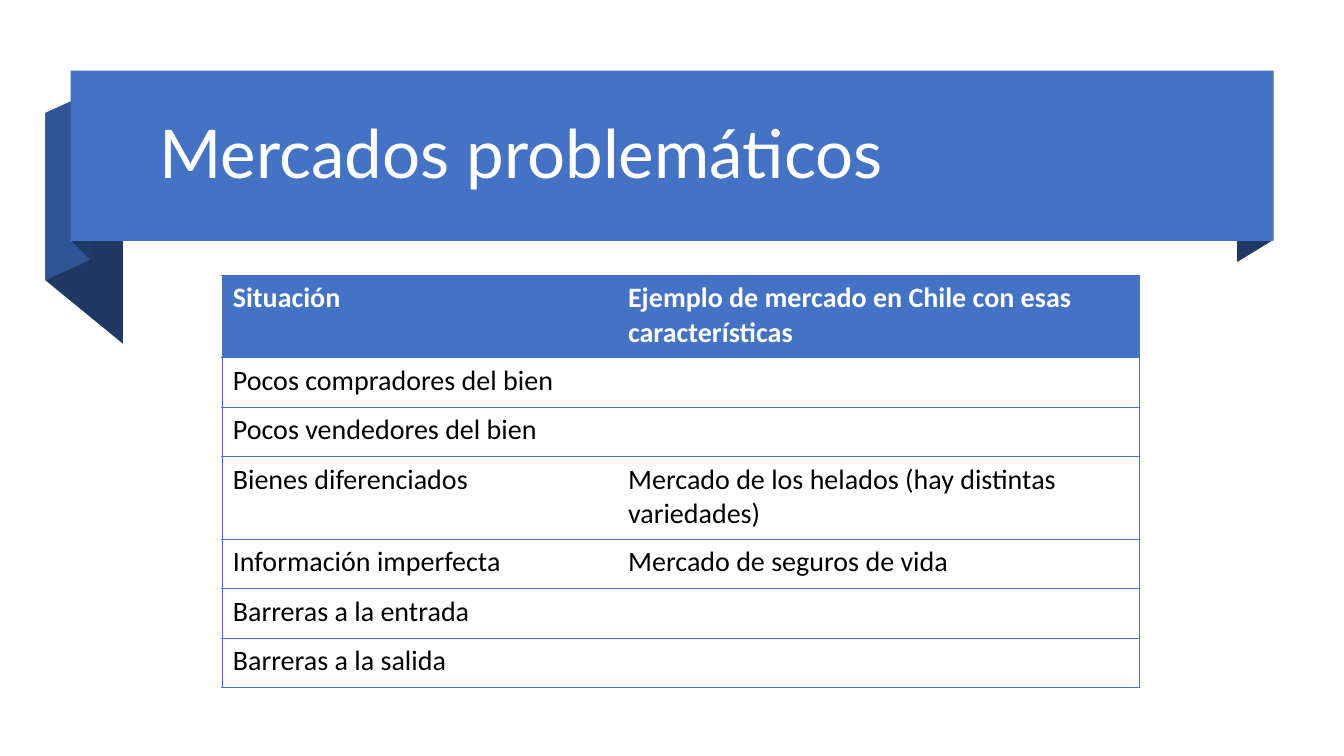
from dataclasses import dataclass

from lxml import etree
from pptx import Presentation
from pptx.dml.color import RGBColor
from pptx.enum import shapes, text
from pptx.oxml import ns
from pptx.util import Inches, Pt


@dataclass(frozen=True)
class Theme:
    blue: str = "4472C4"
    mid_blue: str = "2F5597"
    navy: str = "203864"
    white: str = "FFFFFF"
    black: str = "000000"
    title_font: str = "Lato"
    table_font: str = "Calibri"
    title_size: int = 48
    table_size: int = 20
    border: float = 0.5


THEME = Theme()

RIBBON_FOLDS = [
    (THEME.navy, [(12.63, 2.38), (12.27, 2.6), (12.27, 0.91), (12.63, 0.7)]),
    (THEME.navy, [(1.22, 3.41), (0.45, 2.78), (0.45, 1.12), (1.22, 1.75)]),
    (THEME.mid_blue, [(0.89, 2.58), (0.45, 2.78), (0.45, 1.12), (0.89, 0.92)]),
    (THEME.navy, [(0.89, 2.57), (0.71, 2.39), (0.71, 0.7), (0.89, 0.89)]),
]

MARKETS = [
    ("Situación", "Ejemplo de mercado en Chile con esas características"),
    ("Pocos compradores del bien", ""),
    ("Pocos vendedores del bien", ""),
    ("Bienes diferenciados", "Mercado de los helados (hay distintas variedades)"),
    ("Información imperfecta", "Mercado de seguros de vida"),
    ("Barreras a la entrada", ""),
    ("Barreras a la salida", ""),
]
COLUMN_WIDTHS = (3.92, 5.18)
SINGLE_LINE, DOUBLE_LINE = 0.49, 0.82
TWO_LINE_ROWS = (0, 3)


def write(frame, content, *, font, size, color, bold=False, spacing=None):
    paragraph = frame.paragraphs[0]
    paragraph.alignment = text.PP_ALIGN.LEFT
    paragraph.line_spacing = spacing
    run = paragraph.add_run()
    run.text = content
    run.font.name = font
    run.font.size = Pt(size)
    run.font.bold = bold
    run.font.color.rgb = RGBColor.from_string(color)


def paint(part, color):
    part.shadow.inherit = False
    part.fill.solid()
    part.fill.fore_color.rgb = RGBColor.from_string(color)
    part.line.fill.background()


def add_ribbon(slide):
    ribbon = slide.shapes.add_group_shape()
    for color, corners in RIBBON_FOLDS:
        start, *rest = [(Inches(x), Inches(y)) for x, y in corners]
        outline = ribbon.shapes.build_freeform(*start)
        outline.add_line_segments(rest, close=True)
        paint(outline.convert_to_shape(), color)
    band = ribbon.shapes.add_shape(
        shapes.MSO_SHAPE.RECTANGLE,
        Inches(0.7), Inches(0.7), Inches(11.93), Inches(1.69),
    )
    paint(band, THEME.blue)


def add_title(slide, content):
    title = slide.shapes.title
    title.left, title.top = Inches(1.48), Inches(0.83)
    title.width, title.height = Inches(10.94), Inches(1.45)
    frame = title.text_frame
    frame.word_wrap = True
    frame.auto_size = text.MSO_AUTO_SIZE.NONE
    frame.vertical_anchor = text.MSO_ANCHOR.MIDDLE
    write(frame, content, font=THEME.title_font, size=THEME.title_size,
          color=THEME.white, spacing=0.9)
    title.element.getparent().append(title.element)


def set_borders(cell, visible_sides):
    properties = cell._tc.get_or_add_tcPr()
    for side in "LRTB":
        line = etree.SubElement(properties, ns.qn(f"a:ln{side}"),
                                w=str(Pt(THEME.border)))
        if side in visible_sides:
            fill = etree.SubElement(line, ns.qn("a:solidFill"))
            etree.SubElement(fill, ns.qn("a:srgbClr"), val=THEME.blue)
        else:
            etree.SubElement(line, ns.qn("a:noFill"))


def format_cell(cell, content, *, header, outer_side):
    cell.margin_left = cell.margin_right = Inches(0.11)
    cell.margin_top = cell.margin_bottom = Inches(0.06)
    set_borders(cell, outer_side + "TB")
    cell.fill.solid()
    cell.fill.fore_color.rgb = RGBColor.from_string(
        THEME.blue if header else THEME.white)
    if content:
        write(cell.text_frame, content, font=THEME.table_font,
              size=THEME.table_size, bold=header,
              color=THEME.white if header else THEME.black)


def add_market_table(slide):
    heights = [DOUBLE_LINE if row in TWO_LINE_ROWS else SINGLE_LINE
               for row in range(len(MARKETS))]
    markets = slide.shapes.add_table(
        len(MARKETS), len(COLUMN_WIDTHS), Inches(2.2), Inches(2.73),
        Inches(sum(COLUMN_WIDTHS)), Inches(sum(heights)),
    ).table
    markets.horz_banding = False
    for column, width in zip(markets.columns, COLUMN_WIDTHS):
        column.width = Inches(width)
    for row, height in zip(markets.rows, heights):
        row.height = Inches(height)
    for row, entries in enumerate(MARKETS):
        for column, entry in enumerate(entries):
            format_cell(markets.cell(row, column), entry,
                        header=row == 0, outer_side="LR"[column])


def main():
    deck = Presentation()
    deck.slide_width, deck.slide_height = Inches(13.33), Inches(7.5)
    slide = deck.slides.add_slide(deck.slide_layouts.get_by_name("Title Only"))
    add_ribbon(slide)
    add_title(slide, "Mercados problemáticos")
    add_market_table(slide)
    deck.save("out.pptx")


if __name__ == "__main__":
    main()
